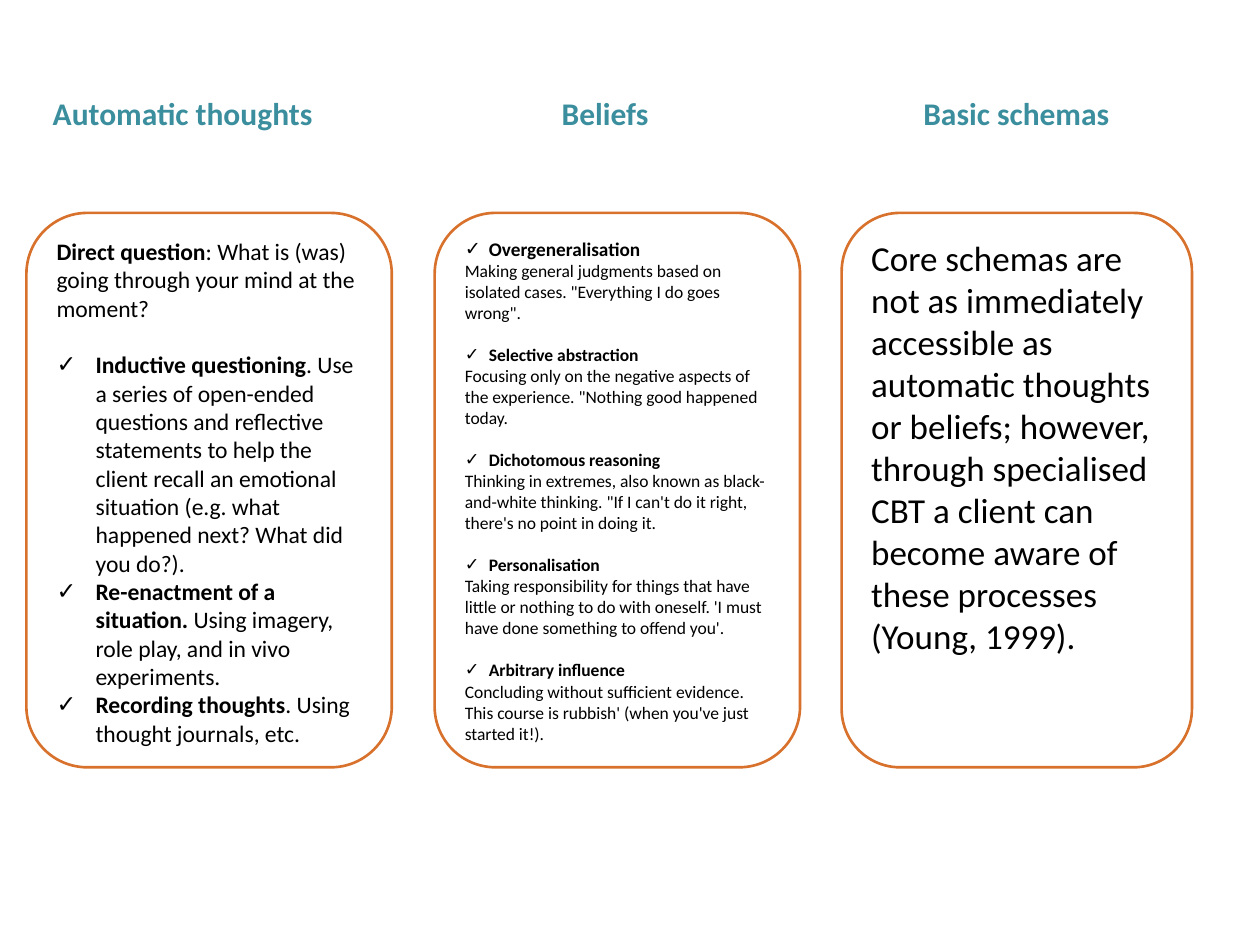
from dataclasses import dataclass

import pptx
import pptx.dml.color
import pptx.enum.shapes
import pptx.enum.text
import pptx.oxml.ns
import pptx.slide
import pptx.text.text
import pptx.util
from lxml import etree

Inches = pptx.util.Inches
Pt = pptx.util.Pt
RGBColor = pptx.dml.color.RGBColor

WHITE = RGBColor(0xFF, 0xFF, 0xFF)
BLACK = RGBColor(0x00, 0x00, 0x00)
ORANGE = RGBColor(0xD7, 0x71, 0x2C)
TEAL = RGBColor(0x3B, 0x8E, 0x9D)
FONT = "Calibri"
LINE_HEIGHT = 1.2
HEADING_TOP = 0.7
PANEL_TOP, PANEL_HEIGHT = 1.69, 4.4


@dataclass
class Entry:
    """One paragraph: a bold lead followed by plain text."""
    lead: str = ""
    body: str = ""
    size: float = 10
    indent: float = 0  # inches; a positive indent brings a check mark
    gap: bool = False  # one line of space before


@dataclass
class Column:
    heading: str
    heading_left: float
    heading_width: float
    heading_height: float
    panel_left: float
    panel_width: float
    entries: list[Entry]


DISTORTIONS = [
    ("Overgeneralisation",
     'Making general judgments based on isolated cases. "Everything I do goes wrong".'),
    ("Selective abstraction",
     'Focusing only on the negative aspects of the experience. "Nothing good happened today.'),
    ("Dichotomous reasoning",
     "Thinking in extremes, also known as black-and-white thinking. "
     "\"If I can't do it right, there's no point in doing it."),
    ("Personalisation",
     "Taking responsibility for things that have little or nothing to do with oneself. "
     "'I must have done something to offend you'."),
    ("Arbitrary influence",
     "Concluding without sufficient evidence. This course is rubbish' "
     "(when you've just started it!)."),
]

thought_entries = [
    Entry("Direct question", ": What is (was) going through your mind at the moment?", 13.5),
    Entry("Inductive questioning",
          ". Use a series of open-ended questions and reflective statements to help the client "
          "recall an emotional situation (e.g. what happened next? What did you do?).",
          13.5, 0.31, gap=True),
    Entry("Re-enactment of a situation. ",
          "Using imagery, role play, and in vivo experiments.", 13.5, 0.31),
    Entry("Recording thoughts", ". Using thought journals, etc.", 13.5, 0.31),
]
belief_entries = [
    entry
    for number, (name, meaning) in enumerate(DISTORTIONS)
    for entry in (Entry(lead=name, size=10 if number else 11, indent=0.19, gap=number > 0),
                  Entry(body=meaning))
]
schema_entries = [
    Entry(body="Core schemas are not as immediately accessible as automatic thoughts or beliefs; "
               "however, through specialised CBT a client can become aware of these processes "
               "(Young, 1999).", size=20),
]

COLUMNS = [
    Column("Automatic thoughts", 0.32, 2.41, 0.71, 0.21, 2.9, thought_entries),
    Column("Beliefs", 4.36, 0.9, 0.4, 3.45, 2.9, belief_entries),
    Column("Basic schemas", 7.23, 1.69, 0.4, 6.68, 2.78, schema_entries),
]


def add_check_mark(paragraph: pptx.text.text._Paragraph, indent: float) -> None:
    properties = paragraph._p.get_or_add_pPr()
    properties.set("marL", str(Inches(indent)))
    properties.set("indent", str(-Inches(indent)))
    qn = pptx.oxml.ns.qn
    etree.SubElement(properties, qn("a:buFont")).set("typeface", "Arial")
    etree.SubElement(properties, qn("a:buChar")).set("char", "✓")


def format_font(font: pptx.text.text.Font, size: float, color: RGBColor, bold: bool) -> None:
    font.name = FONT
    font.size = Pt(size)
    font.color.rgb = color
    font.bold = bold


def write_entry(paragraph: pptx.text.text._Paragraph, entry: Entry) -> None:
    paragraph.alignment = pptx.enum.text.PP_ALIGN.LEFT
    if entry.indent:
        add_check_mark(paragraph, entry.indent)
    if entry.gap:
        paragraph.space_before = Pt(LINE_HEIGHT * entry.size)
    for text, bold in ((entry.lead, True), (entry.body, False)):
        if text:
            run = paragraph.add_run()
            run.text = text
            format_font(run.font, entry.size, BLACK, bold)


def add_panel(slide: pptx.slide.Slide, column: Column) -> None:
    panel = slide.shapes.add_shape(
        pptx.enum.shapes.MSO_SHAPE.ROUNDED_RECTANGLE,
        Inches(column.panel_left), Inches(PANEL_TOP),
        Inches(column.panel_width), Inches(PANEL_HEIGHT))
    panel.shadow.inherit = False
    panel.fill.solid()
    panel.fill.fore_color.rgb = WHITE
    panel.line.color.rgb = ORANGE
    panel.line.width = Pt(1.5)
    frame = panel.text_frame
    frame.word_wrap = True
    frame.vertical_anchor = pptx.enum.text.MSO_ANCHOR.TOP
    for number, entry in enumerate(column.entries):
        write_entry(frame.add_paragraph() if number else frame.paragraphs[0], entry)


def add_heading(slide: pptx.slide.Slide, column: Column) -> None:
    heading = slide.shapes.add_textbox(
        Inches(column.heading_left), Inches(HEADING_TOP),
        Inches(column.heading_width), Inches(column.heading_height))
    frame = heading.text_frame
    frame.word_wrap = column.heading_height > 0.4
    frame.text = column.heading
    format_font(frame.paragraphs[0].runs[0].font, 18, TEAL, True)


def main() -> None:
    presentation = pptx.Presentation()
    presentation.slide_width = Inches(10)
    presentation.slide_height = Inches(7.5)
    slide = presentation.slides.add_slide(presentation.slide_layouts[6])
    for column in COLUMNS:
        add_panel(slide, column)
    for column in COLUMNS:
        add_heading(slide, column)
    presentation.save("out.pptx")


if __name__ == "__main__":
    main()
